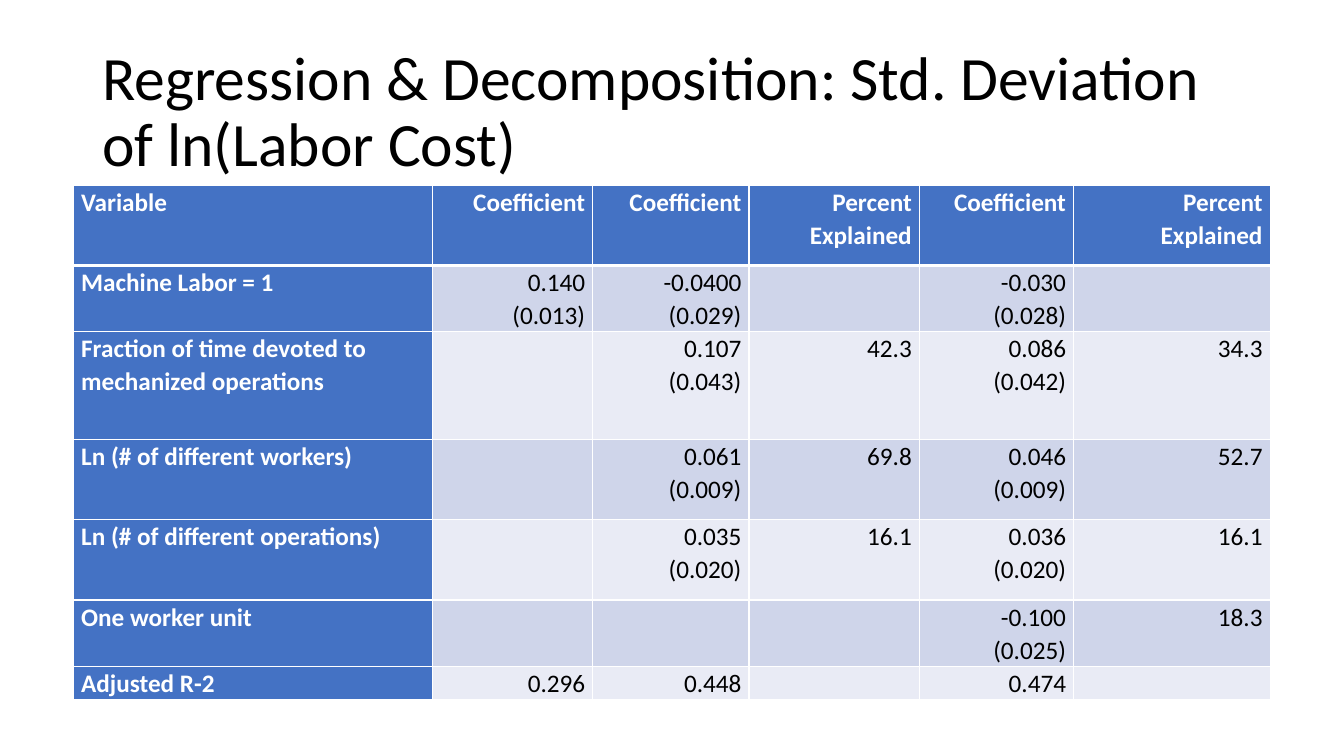
from lxml.etree import SubElement
from pptx import Presentation
from pptx.dml.color import RGBColor as RGB
from pptx.enum.text import MSO_ANCHOR as ANCHOR, PP_ALIGN as ALIGN
from pptx.oxml.ns import qn
from pptx.util import Pt

COLORS = {"header": "4472C4", "odd": "CFD5EA", "even": "E9EBF5",
          "white": "FFFFFF", "black": "000000"}
TITLE = "Regression & Decomposition: Std. Deviation of ln(Labor Cost)"
COL_WIDTHS = [256.3, 114.5, 111.6, 121.7, 110.2, 140.4]
ROW_HEIGHTS = [57.4, 47.2, 77, 57.4, 57.4, 47.2, 23.6]
ROWS = [
    ["Variable", "Coefficient", "Coefficient", "Percent Explained",
     "Coefficient", "Percent Explained"],
    ["Machine Labor = 1", "0.140\n(0.013)", "-0.0400\n(0.029)", "",
     "-0.030\n(0.028)", ""],
    ["Fraction of time devoted to mechanized operations", "",
     "0.107\n(0.043)", "42.3", "0.086\n(0.042)", "34.3"],
    ["Ln (# of different workers)", "", "0.061\n(0.009)", "69.8",
     "0.046\n(0.009)", "52.7"],
    ["Ln (# of different operations)", "", "0.035\n(0.020)", "16.1",
     "0.036\n(0.020)", "16.1"],
    ["One worker unit", "", "", "", "-0.100\n(0.025)", "18.3"],
    ["Adjusted R-2", "0.296", "0.448", "", "0.474", ""],
]


def write(tf, text, size=18, color="black", bold=False, align=ALIGN.LEFT,
          spacing=1.07):
    for i, line in enumerate(text.split("\n")):
        p = tf.paragraphs[0] if i == 0 else tf.add_paragraph()
        p.alignment, p.line_spacing = align, spacing
        if line:
            r = p.add_run()
            r.text = line
            r.font.name, r.font.size, r.font.bold = "Calibri", Pt(size), bold
            r.font.color.rgb = RGB.from_string(COLORS[color])


def set_borders(cell, **widths):
    tc_pr = cell._tc.get_or_add_tcPr()
    for i, side in enumerate("LRTB"):
        ln = SubElement(tc_pr, qn(f"a:ln{side}"), w=str(Pt(widths.get(side, 1))))
        fill = SubElement(ln, qn("a:solidFill"))
        SubElement(fill, qn("a:srgbClr"), val=COLORS["white"])
        tc_pr.insert(i, ln)


class Deck:
    def __init__(self, prs):
        self.slide = prs.slides.add_slide(prs.slide_layouts[6])

    def title(self, text, x, y, w, h):
        sp = self.slide.shapes.add_textbox(Pt(x), Pt(y), Pt(w), Pt(h))
        tf = sp.text_frame
        tf.word_wrap = True
        tf.vertical_anchor = ANCHOR.MIDDLE
        write(tf, text, size=44, spacing=0.9)

    def table(self, rows, x, y, widths, heights):
        frame = self.slide.shapes.add_table(
            len(rows), len(widths), Pt(x), Pt(y), Pt(sum(widths)), Pt(sum(heights)))
        table = frame.table
        table.first_col = True
        for col, w in zip(table.columns, widths):
            col.width = Pt(w)
        for row, h in zip(table.rows, heights):
            row.height = Pt(h)
        for i, values in enumerate(rows):
            for j, text in enumerate(values):
                self.cell(table.cell(i, j), text, i, j)

    def cell(self, cell, text, i, j):
        heading = i == 0 or j == 0
        band = "header" if heading else "odd" if i % 2 else "even"
        cell.margin_left = cell.margin_right = Pt(5.4)
        cell.margin_top = cell.margin_bottom = 0
        set_borders(cell, T=3 if i == 1 else 1, B=3 if i == 0 else 1)
        cell.fill.solid()
        cell.fill.fore_color.rgb = RGB.from_string(COLORS[band])
        write(cell.text_frame, text, bold=heading,
              color="white" if heading else "black",
              align=ALIGN.RIGHT if j else ALIGN.LEFT)


def main():
    prs = Presentation()
    prs.slide_width, prs.slide_height = Pt(960), Pt(540)
    deck = Deck(prs)
    deck.title(TITLE, 66, 28.75, 828, 104.4)
    deck.table(ROWS, 52.6, 132.3, COL_WIDTHS, ROW_HEIGHTS)
    prs.save("out.pptx")


if __name__ == "__main__":
    main()
